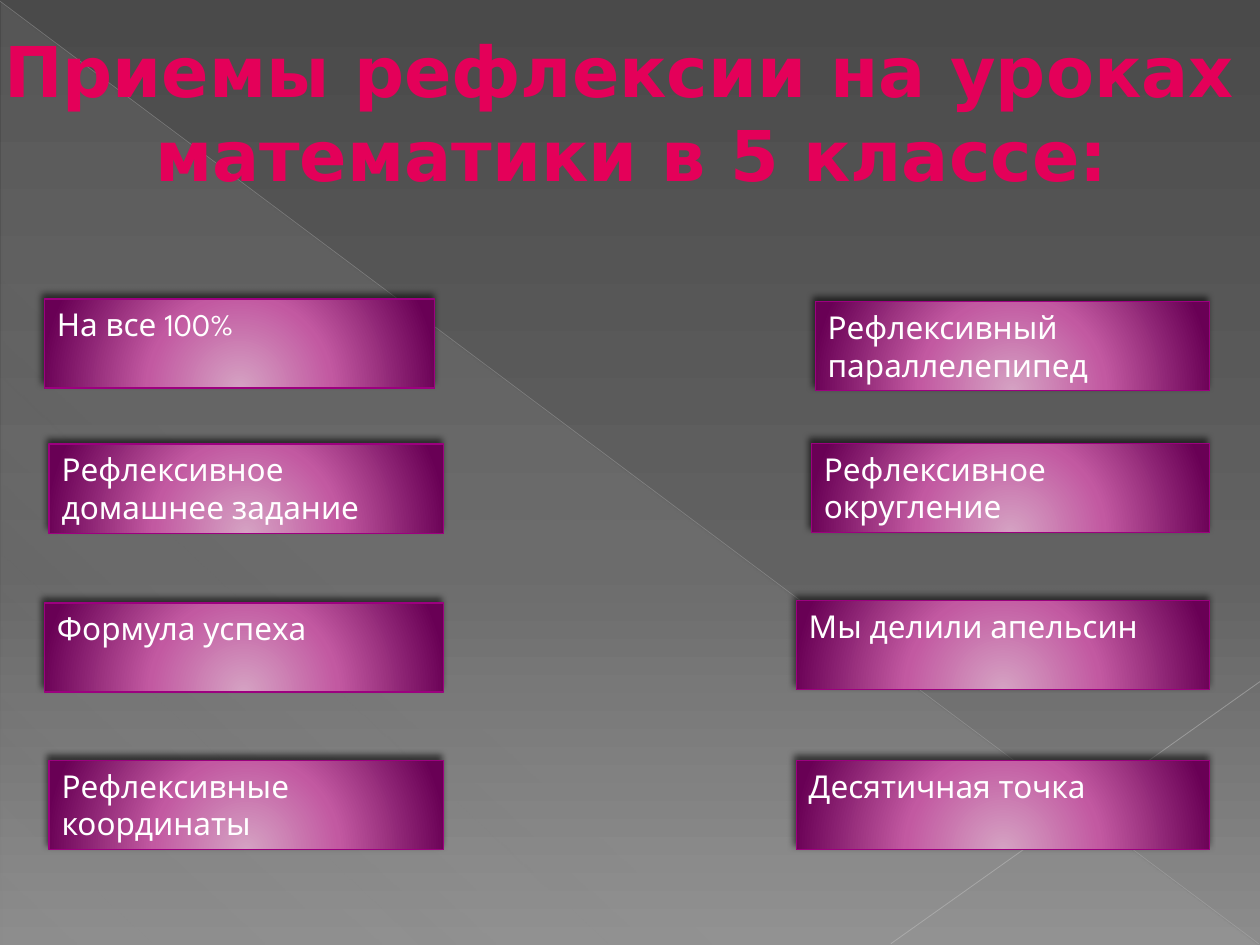
from lxml.etree import SubElement
from pptx import Presentation
from pptx.dml.color import RGBColor
from pptx.enum.shapes import MSO_CONNECTOR, MSO_SHAPE
from pptx.enum.text import MSO_ANCHOR, MSO_AUTO_SIZE, PP_ALIGN
from pptx.oxml import parse_xml
from pptx.oxml.ns import nsdecls, qn
from pptx.util import Inches, Pt

THEME = {
    "back": [(0, "4A4A4A", 100), (60, "626262", 100), (100, "8C8C8C", 100)],
    "veil": [(0, "D2D2D2", 10), (70, "D2D2D2", 8), (100, "D2D2D2", 1)],
    "glow": [(0, "D5A2C3", 100), (46, "C259A1", 100), (100, "690055", 100)],
    "edge": "9C007F",
    "head": {"font": "DejaVu Sans", "size": 40, "color": "E40059",
             "bold": True, "align": PP_ALIGN.CENTER, "side": 0},
    "body": {"font": "League Spartan", "size": 18, "color": "FFFFFF"},
}
DOWN = '<a:lin ang="5400000" scaled="0"/>'
SLANT = '<a:lin ang="7980000" scaled="0"/>'
ROUND = ('<a:path path="circle"><a:fillToRect l="50000" t="155000" '
         'r="50000" b="-55000"/></a:path>')


def paint(item, stops, shade):
    """Fill a shape or background with gradient stops (place, colour, opacity)."""
    item.fill.solid()
    old = next(item.element.iter(qn("a:solidFill")))
    marks = "".join(
        f'<a:gs pos="{at * 1000}"><a:srgbClr val="{tone}">'
        f'<a:alpha val="{alpha * 1000}"/></a:srgbClr></a:gs>'
        for at, tone, alpha in stops)
    new = parse_xml(f'<a:gradFill {nsdecls("a")} rotWithShape="1">'
                    f'<a:gsLst>{marks}</a:gsLst>{shade}</a:gradFill>')
    old.getparent().replace(old, new)


def write(frame, text, font, size, color, bold=False, align=PP_ALIGN.LEFT,
          side=0.1):
    frame.text = text
    frame.word_wrap = True
    frame.auto_size = MSO_AUTO_SIZE.NONE
    frame.vertical_anchor = MSO_ANCHOR.TOP
    frame.margin_left = frame.margin_right = Inches(side)
    for para in frame.paragraphs:
        para.alignment = align
        for run in para.runs:
            run.font.name, run.font.size, run.font.bold = font, Pt(size), bold
            run.font.color.rgb = RGBColor.from_string(color)


deck = Presentation()
deck.slide_width, deck.slide_height = Inches(10), Inches(7.5)
# One hundred columns and one hundred rows
COL, ROW = deck.slide_width / 100, deck.slide_height / 100
slide = deck.slides.add_slide(deck.slide_layouts[5])
shapes = slide.shapes

# Backdrop
paint(slide.background, THEME["back"], DOWN)

veil = shapes.add_shape(MSO_SHAPE.RIGHT_TRIANGLE, int(0.1 * COL), int(0.27 * ROW),
                        int(99.8 * COL), int(99.73 * ROW))
veil.shadow.inherit = False
veil.line.fill.background()
paint(veil, THEME["veil"], SLANT)

RAYS = [
    (0, 0.13, 99.9, 99.87, "BFBFBF", 0.39, 35),
    (100, 72.13, 70.7, 99.87, "C6C6C6", 0.47, 45),
]
for x1, y1, x2, y2, tone, width, alpha in RAYS:
    ray = shapes.add_connector(MSO_CONNECTOR.STRAIGHT, int(x1 * COL), int(y1 * ROW),
                               int(x2 * COL), int(y2 * ROW))
    ray.line.width = Pt(width)
    ray.line.color.rgb = RGBColor.from_string(tone)
    clear = next(ray.element.iter(qn("a:srgbClr")))
    SubElement(clear, qn("a:alpha"), val=str(alpha * 1000))
    SubElement(ray.element.spPr, qn("a:effectLst"))

# Title, in front of the backdrop
title = shapes.title
title.left, title.top = 0, int(2.27 * ROW)
title.width, title.height = int(98.3 * COL), int(19.33 * ROW)
write(title.text_frame, "Приемы рефлексии на уроках\n математики в 5 классе:",
      **THEME["head"])
shapes.element.append(title.element)

# Cards: left edge, right edge, top, text
CARDS = [
    (3.53, 34.5, 31.65, "На все 100%"),
    (3.9, 35.2, 47, "Рефлексивное\nдомашнее задание"),
    (3.53, 35.2, 63.8, "Формула успеха"),
    (3.9, 35.2, 80.47, "Рефлексивные\nкоординаты"),
    (64.7, 96, 31.92, "Рефлексивный\nпараллелепипед"),
    (64.4, 96, 46.93, "Рефлексивное\nокругление"),
    (63.2, 96, 63.55, "Мы делили апельсин"),
    (63.2, 96, 80.47, "Десятичная точка"),
]
for left, right, top, text in CARDS:
    card = shapes.add_shape(MSO_SHAPE.RECTANGLE, int(left * COL), int(top * ROW),
                            int((right - left) * COL), int(9.43 * ROW))
    paint(card, THEME["glow"], ROUND)
    card.line.width = Pt(0.75)
    card.line.color.rgb = RGBColor.from_string(THEME["edge"])
    card.shadow.inherit = False
    shade = SubElement(card.element.spPr.find(qn("a:effectLst")), qn("a:outerShdw"),
                       blurRad=str(Pt(4)), dist=str(Pt(3)), dir="14700000",
                       algn="tl", rotWithShape="0")
    dark = SubElement(shade, qn("a:srgbClr"), val="000000")
    SubElement(dark, qn("a:alpha"), val="60000")
    write(card.text_frame, text, **THEME["body"])

deck.save("out.pptx")
